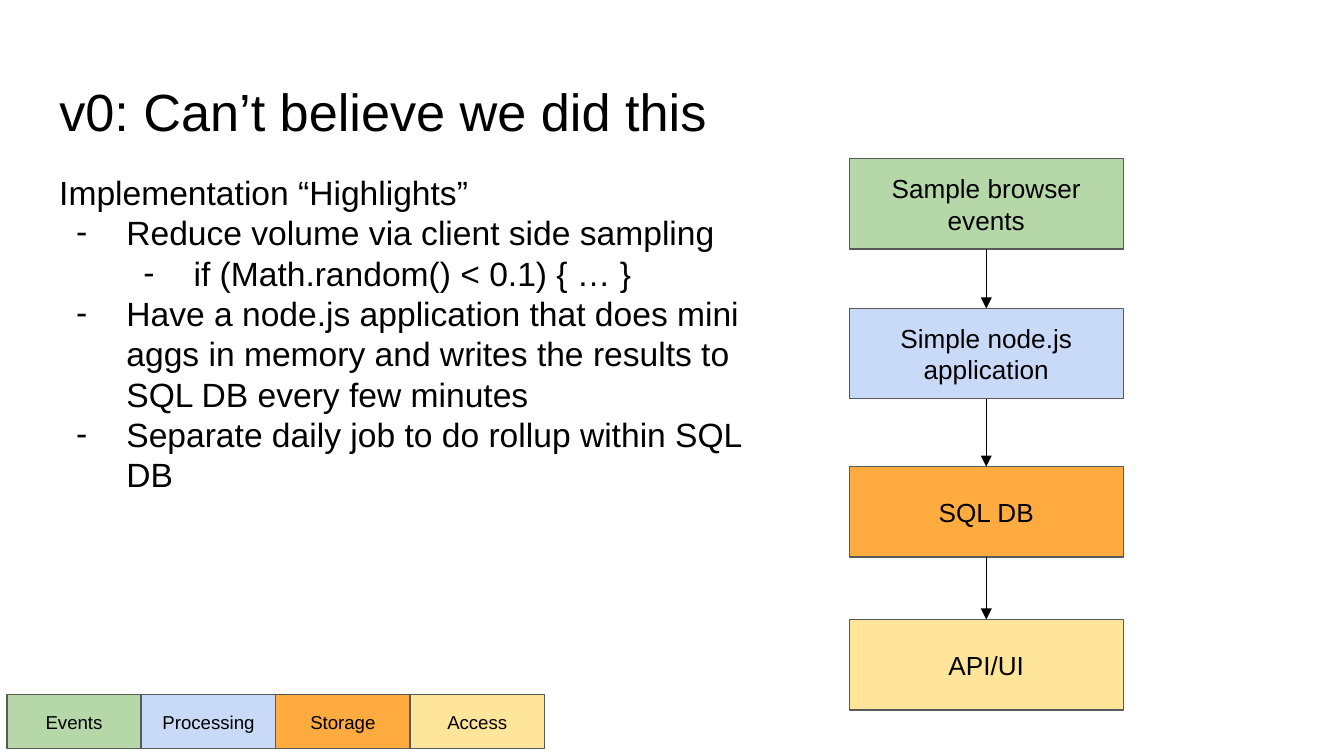
"""Build the v0 pipeline slide with highlights, a flow and a colour key."""

from lxml.etree import SubElement
from pptx import Presentation
from pptx.dml.color import RGBColor
from pptx.enum.shapes import MSO_CONNECTOR, MSO_SHAPE
from pptx.enum.text import MSO_ANCHOR, MSO_AUTO_SIZE, PP_ALIGN
from pptx.oxml.ns import qn
from pptx.util import Cm, Pt

BLACK = RGBColor(0x00, 0x00, 0x00)
GRAY = RGBColor(0x59, 0x59, 0x59)
GREEN = RGBColor(0xB6, 0xD7, 0xA8)
BLUE = RGBColor(0xC9, 0xDA, 0xF8)
ORANGE = RGBColor(0xFF, 0xAB, 0x40)
YELLOW = RGBColor(0xFF, 0xE5, 0x99)

TITLE = "v0: Can’t believe we did this"
NOTES = [
    (0, "Implementation “Highlights”"),
    (1, "Reduce volume via client side sampling"),
    (2, "if (Math.random() < 0.1) { … }"),
    (1, "Have a node.js application that does mini aggs in memory "
        "and writes the results to SQL DB every few minutes"),
    (1, "Separate daily job to do rollup within SQL DB"),
]
STEPS = [
    ("Sample browser events", GREEN, 3.0),
    ("Simple node.js application", BLUE, 5.83),
    ("SQL DB", ORANGE, 8.82),
    ("API/UI", YELLOW, 11.71),
]
KEY = [("Events", GREEN), ("Processing", BLUE),
       ("Storage", ORANGE), ("Access", YELLOW)]


def set_frame(frame, anchor):
    frame.word_wrap = True
    frame.auto_size = MSO_AUTO_SIZE.NONE
    frame.vertical_anchor = anchor
    frame.margin_left = frame.margin_right = Cm(0.25)
    frame.margin_top = frame.margin_bottom = Cm(0.25)


def add_run(para, text, size, align=PP_ALIGN.LEFT):
    para.alignment = align
    run = para.add_run()
    run.text = text
    run.font.name = "Arial"
    run.font.size = Pt(size)
    run.font.color.rgb = BLACK


def add_dash(para, level):
    para.level = level - 1
    props = para._p.get_or_add_pPr()
    props.set("marL", str(Cm(1.27 * level)))
    props.set("indent", str(Cm(-0.95)))
    color = SubElement(props, qn("a:buClr"))
    SubElement(color, qn("a:srgbClr"), val=str(BLACK))
    SubElement(props, qn("a:buFont"), typeface="Arial")
    SubElement(props, qn("a:buChar"), char="-")


def add_box(slide, text, fill, size, *place):
    box = slide.shapes.add_shape(MSO_SHAPE.RECTANGLE, *map(Cm, place))
    box.shadow.inherit = False
    box.fill.solid()
    box.fill.fore_color.rgb = fill
    box.line.color.rgb = GRAY
    box.line.width = Pt(0.75)
    set_frame(box.text_frame, MSO_ANCHOR.MIDDLE)
    add_run(box.text_frame.paragraphs[0], text, size, PP_ALIGN.CENTER)
    return box


def add_arrow(slide, start, end):
    arrow = slide.shapes.add_connector(MSO_CONNECTOR.STRAIGHT, 0, 0, 0, 0)
    arrow.begin_connect(start, 2)
    arrow.end_connect(end, 0)
    arrow.line.color.rgb = BLACK
    arrow.line.width = Pt(0.75)
    SubElement(arrow.line._get_or_add_ln(), qn("a:tailEnd"), type="triangle")
    SubElement(arrow._element.spPr, qn("a:effectLst"))


def main():
    deck = Presentation()
    deck.slide_width, deck.slide_height = Cm(25.4), Cm(14.29)
    slide = deck.slides.add_slide(deck.slide_layouts[5])

    title = slide.shapes.title
    title.left, title.top = Cm(0.87), Cm(1.24)
    title.width, title.height = Cm(23.67), Cm(1.6)
    set_frame(title.text_frame, MSO_ANCHOR.TOP)
    add_run(title.text_frame.paragraphs[0], TITLE, 28)

    body = slide.shapes.add_textbox(Cm(0.87), Cm(3), Cm(14.17), Cm(10.72))
    frame = body.text_frame
    set_frame(frame, MSO_ANCHOR.TOP)
    for i, (level, text) in enumerate(NOTES):
        para = frame.add_paragraph() if i else frame.paragraphs[0]
        if level:
            add_dash(para, level)
        add_run(para, text, 18)

    boxes = [add_box(slide, text, fill, 14, 16.05, top, 5.18, 1.71)
             for text, fill, top in STEPS]
    for start, end in zip(boxes, boxes[1:]):
        add_arrow(slide, start, end)

    for i, (text, fill) in enumerate(KEY):
        add_box(slide, text, fill, 10, 0.13 + 2.54 * i, 13.13, 2.54, 1.02)

    deck.save("out.pptx")


if __name__ == "__main__":
    main()
